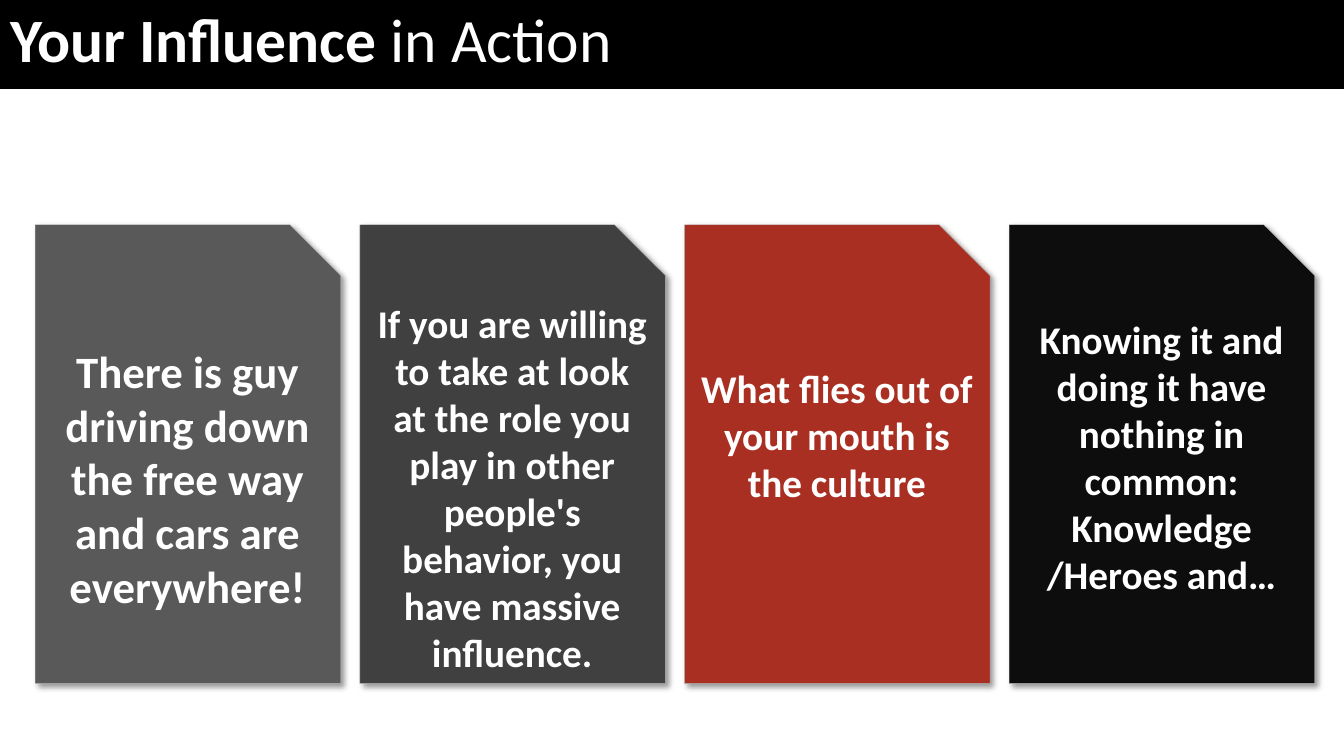
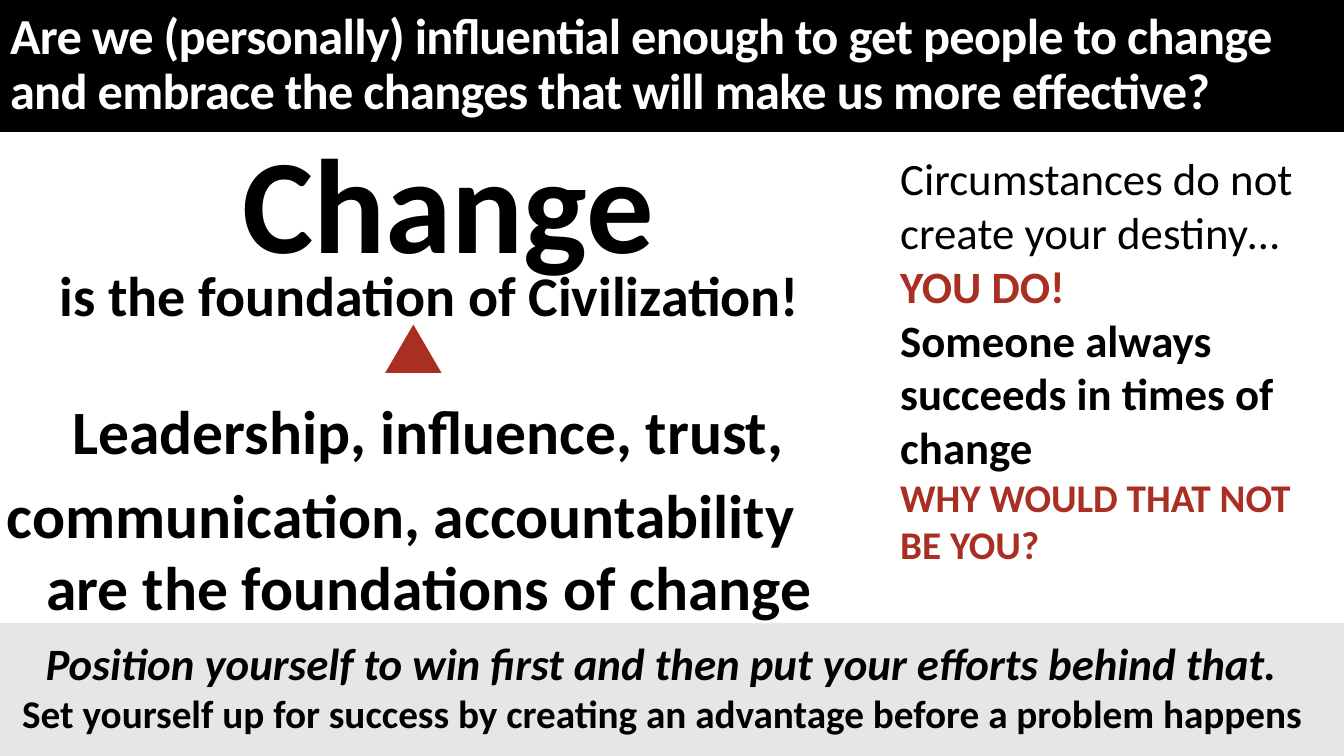
from dataclasses import dataclass

from lxml import etree
from pptx import Presentation
from pptx.dml.color import RGBColor
from pptx.enum.shapes import MSO_SHAPE
from pptx.enum.text import MSO_ANCHOR, MSO_AUTO_SIZE, PP_ALIGN
from pptx.oxml.ns import qn
from pptx.util import Inches, Pt

RECTANGLE = MSO_SHAPE.RECTANGLE
SNIPPED = MSO_SHAPE.SNIP_1_RECTANGLE
TRIANGLE = MSO_SHAPE.ISOSCELES_TRIANGLE
LEFT, CENTER = PP_ALIGN.LEFT, PP_ALIGN.CENTER

FONT = "Calibri"
BLACK = RGBColor(0x00, 0x00, 0x00)
WHITE = RGBColor(0xFF, 0xFF, 0xFF)
RED = RGBColor(0xAA, 0x2F, 0x23)
GRAY = RGBColor(0x59, 0x59, 0x59)
DARK_GRAY = RGBColor(0x40, 0x40, 0x40)
NEAR_BLACK = RGBColor(0x0D, 0x0D, 0x0D)
LIGHT_GRAY = RGBColor(0xE7, 0xE6, 0xE6)
CARD_BORDER = RGBColor(0xAF, 0xAB, 0xAB)

SLIDE_WIDTH, SLIDE_HEIGHT = 13.33, 7.5
TITLE_ONLY_LAYOUT = 5
BAND_TOP = -0.05
CARD_LEFT, CARD_TOP, CARD_PITCH = 0.35, 2.23, 3.22
CARD_WIDTH, CARD_HEIGHT = 3.03, 4.55
CARD_TEXT_INSET, CARD_TEXT_WIDTH = 0.06, 2.9


@dataclass(frozen=True)
class Box:
    left: float
    top: float
    width: float
    height: float

    def lengths(self):
        return tuple(Inches(side) for side in (self.left, self.top, self.width, self.height))


@dataclass(frozen=True)
class Line:
    text: str
    size: float
    color: RGBColor = BLACK
    bold: bool = True
    italic: bool = False
    alignment: PP_ALIGN = CENTER
    spacing: object = None
    first_indent: float = 0


@dataclass(frozen=True)
class TextBlock:
    box: Box
    lines: tuple


@dataclass(frozen=True)
class Card:
    text: str
    fill: RGBColor
    text_top: float
    size: float = 28


CARDS = (
    Card("There is guy driving down the free way and cars are everywhere!", GRAY, 3.36, 32),
    Card("If you are willing to take at look at the role you play in other people's "
         "behavior, you have massive influence.", DARK_GRAY, 2.92),
    Card("What flies out of your mouth is the culture", RED, 3.56),
    Card("Knowing it and doing it have nothing in common: Knowledge\v/Heroes and…",
         NEAR_BLACK, 3.08),
)

CHANGE_BLOCKS = (
    TextBlock(Box(0.75, 1.13, 7.39, 1.76), (Line("Change", 96),)),
    TextBlock(Box(0.1, 2.54, 8.32, 0.77), (Line("is the foundation of Civilization!", 40),)),
    TextBlock(Box(-0.03, 3.75, 8.6, 1.74), (
        Line("Leadership, influence, trust, communication, accountability", 44,
             alignment=LEFT, spacing=Pt(60), first_indent=0.65),)),
    TextBlock(Box(0.03, 5.4, 8.46, 0.85), (Line("are the foundations of change", 44),)),
    TextBlock(Box(8.83, 1.45, 4.22, 4.34), (
        Line("Circumstances do not create your destiny…", 32, bold=False, alignment=LEFT),
        Line("YOU DO!", 32, RED, alignment=LEFT),
        Line("Someone always succeeds in times of change", 32, alignment=LEFT),
        Line("WHY WOULD THAT NOT BE YOU?", 28, RED, alignment=LEFT),
    )),
    TextBlock(Box(0, 6.26, 13.13, 1.11), (
        Line("Position yourself to win first and then put your efforts behind that.", 32,
             italic=True),
        Line("Set yourself up for success by creating an advantage before a problem happens", 28),
    )),
)


def add_filled_shape(slide, kind: MSO_SHAPE, box: Box, fill: RGBColor,
                     line: RGBColor | None = None, line_width: float = 0):
    shape = slide.shapes.add_shape(kind, *box.lengths())
    shape.fill.solid()
    shape.fill.fore_color.rgb = fill
    if line is None:
        shape.line.fill.background()
    else:
        shape.line.color.rgb = line
        shape.line.width = Pt(line_width)
    shape.shadow.inherit = False
    return shape


def add_card_shadow(shape) -> None:
    effects = shape.element.spPr.find(qn("a:effectLst"))
    shadow = etree.SubElement(effects, qn("a:outerShdw"), blurRad=str(Pt(4)),
                              dist=str(Pt(3)), dir="2700000", algn="tl", rotWithShape="0")
    color = etree.SubElement(shadow, qn("a:srgbClr"), val=str(BLACK))
    etree.SubElement(color, qn("a:alpha"), val="40000")


def write_line(paragraph, line: Line) -> None:
    paragraph.text = line.text
    paragraph.alignment = line.alignment
    if line.spacing is not None:
        paragraph.line_spacing = line.spacing
    if line.first_indent:
        properties = paragraph._p.get_or_add_pPr()
        properties.set("marL", "0")
        properties.set("indent", str(Inches(line.first_indent)))
    font = paragraph.font
    font.name = FONT
    font.size = Pt(line.size)
    font.bold = line.bold
    font.italic = line.italic
    font.color.rgb = line.color


def add_text_block(slide, block: TextBlock) -> None:
    frame = slide.shapes.add_textbox(*block.box.lengths()).text_frame
    frame.word_wrap = True
    for index, line in enumerate(block.lines):
        paragraph = frame.add_paragraph() if index else frame.paragraphs[0]
        write_line(paragraph, line)


def add_titled_slide(presentation, box: Box, band_height: float, size: float,
                     bold_text: str, plain_text: str = "", tracking: float = 0):
    """Add a slide with a white title on a black band."""
    slide = presentation.slides.add_slide(presentation.slide_layouts[TITLE_ONLY_LAYOUT])
    title = slide.shapes.title
    title.left, title.top, title.width, title.height = box.lengths()
    frame = title.text_frame
    frame.word_wrap = True
    frame.auto_size = MSO_AUTO_SIZE.NONE
    frame.vertical_anchor = MSO_ANCHOR.TOP
    paragraph = frame.paragraphs[0]
    write_line(paragraph, Line(bold_text, size, WHITE, alignment=LEFT, spacing=0.9))
    if plain_text:
        run = paragraph.add_run()
        run.text = plain_text
        run.font.bold = False
    if tracking:
        for run in paragraph.runs:
            run._r.get_or_add_rPr().set("spc", str(round(tracking * 100)))

    # The band lies behind the title
    band = add_filled_shape(slide, RECTANGLE, Box(0, BAND_TOP, SLIDE_WIDTH, band_height),
                            BLACK, BLACK, 3)
    title.element.addprevious(band.element)
    return slide


def add_card(slide, index: int, card: Card) -> None:
    left = CARD_LEFT + index * CARD_PITCH
    shape = add_filled_shape(slide, SNIPPED, Box(left, CARD_TOP, CARD_WIDTH, CARD_HEIGHT),
                             card.fill, CARD_BORDER, 0.25)
    add_card_shadow(shape)
    text_height = CARD_TOP + CARD_HEIGHT - card.text_top
    text_box = Box(left + CARD_TEXT_INSET, card.text_top, CARD_TEXT_WIDTH, text_height)
    add_text_block(slide, TextBlock(text_box, (Line(card.text, card.size, WHITE),)))


def build_influence_slide(presentation) -> None:
    slide = add_titled_slide(presentation, Box(0, 0.04, 11.14, 0.8), 0.91, 44,
                             "Your Influence ", "in Action")
    for index, card in enumerate(CARDS):
        add_card(slide, index, card)


def build_change_slide(presentation) -> None:
    slide = add_titled_slide(
        presentation, Box(0, 0.06, 13.05, 1.2), 1.34, 36,
        "Are we (personally) influential enough to get people to change "
        "and embrace the changes that will make us more effective?", tracking=-0.5)
    # Footer panel and the pointer between the two statements
    add_filled_shape(slide, RECTANGLE, Box(0, 6.18, SLIDE_WIDTH, 1.32), LIGHT_GRAY)
    add_filled_shape(slide, TRIANGLE, Box(3.82, 3.22, 0.56, 0.48), RED)
    for block in CHANGE_BLOCKS:
        add_text_block(slide, block)


def main() -> None:
    presentation = Presentation()
    presentation.slide_width = Inches(SLIDE_WIDTH)
    presentation.slide_height = Inches(SLIDE_HEIGHT)
    build_influence_slide(presentation)
    build_change_slide(presentation)
    presentation.save("out.pptx")


if __name__ == "__main__":
    main()
